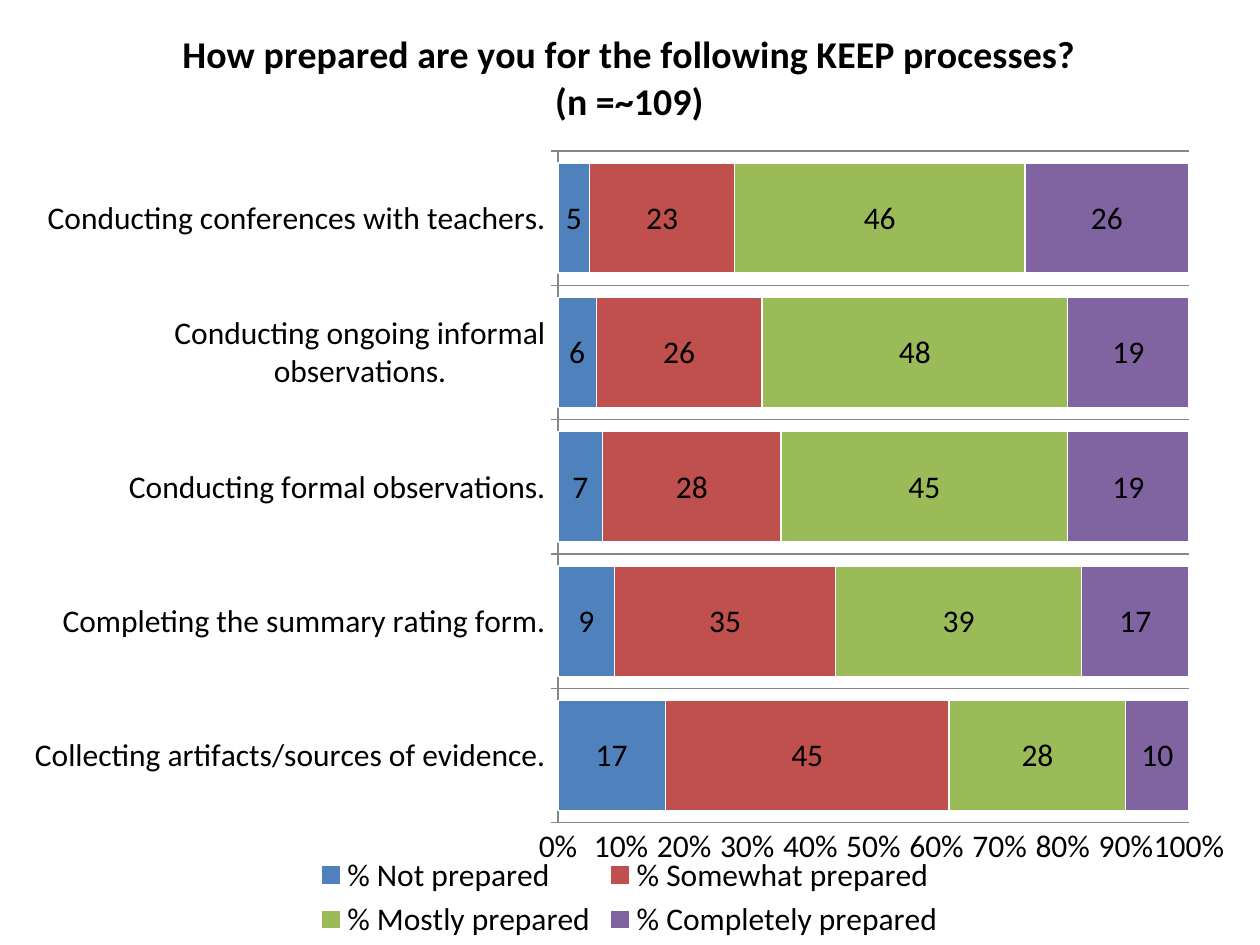
from lxml.etree import SubElement as Sub
from pptx import Presentation
from pptx.chart.data import CategoryChartData as Data
from pptx.dml.color import RGBColor as RGB
from pptx.enum.chart import XL_CHART_TYPE as Kind
from pptx.enum.chart import XL_LABEL_POSITION as Spot
from pptx.enum.chart import XL_LEGEND_POSITION as Side
from pptx.enum.chart import XL_TICK_MARK as Tick
from pptx.oxml.ns import qn
from pptx.util import Pt

BLACK = RGB(0, 0, 0)
WHITE = RGB(255, 255, 255)
GREY = RGB(134, 134, 134)
BLUE = RGB(79, 129, 189)
RED = RGB(192, 80, 77)
GREEN = RGB(155, 187, 89)
PURPLE = RGB(128, 100, 162)

TITLE = ["How prepared are you for the following KEEP processes?", "(n =~109)"]
TASKS = [
    "Collecting artifacts/sources of evidence.",
    "Completing the summary rating form.",
    "Conducting formal observations.",
    "Conducting ongoing informal observations.",
    "Conducting conferences with teachers.",
]
SERIES = [
    ("% Not prepared", BLUE, [17, 9, 7, 6, 5]),
    ("% Somewhat prepared", RED, [45, 35, 28, 26, 23]),
    ("% Mostly prepared", GREEN, [28, 39, 45, 48, 46]),
    ("% Completely prepared", PURPLE, [10, 17, 19, 19, 26]),
]

WIDE, HIGH = 1260, 945
LEFT, SPAN = 10, 1239
PLOT = (558, 151, 631, 672)

BODY = {"name": "Calibri", "size": Pt(18), "bold": False}
HEAD = {"name": "Calibri", "size": Pt(21.6), "bold": True}
BARS = {"gap_width": 22, "overlap": 100, "vary_by_categories": False}
LABELS = {"show_value": True, "position": Spot.CENTER,
          "number_format": "0", "number_format_is_linked": False}
ROWS = {"major_tick_mark": Tick.OUTSIDE, "has_major_gridlines": True}
SCALE = {"major_tick_mark": Tick.NONE, "has_major_gridlines": False,
         "minimum_scale": 0, "maximum_scale": 1, "major_unit": 0.1}
PERCENT = {"number_format": "0%", "number_format_is_linked": False}
KEY = {"position": Side.BOTTOM, "include_in_layout": False}


def px(n):
    return round(n * 914400 / 126)


def put(item, form):
    for name, value in form.items():
        setattr(item, name, value)


def ink(font, form):
    put(font, form)
    font.color.rgb = BLACK


def rule(line, color, width=0.75):
    line.color.rgb = color
    line.width = Pt(width)


def place(chart):
    area = chart.plots[0]._element.getparent()
    for old in area.findall(qn("c:layout")):
        area.remove(old)
    outer = Sub(area, qn("c:layout"))
    area.insert(0, outer)
    box = Sub(outer, qn("c:manualLayout"))
    x, y, w, h = PLOT
    parts = {"layoutTarget": "inner", "xMode": "edge", "yMode": "edge",
             "x": (x - LEFT) / SPAN, "y": y / HIGH, "w": w / SPAN, "h": h / HIGH}
    for tag, value in parts.items():
        Sub(box, qn("c:" + tag)).set("val", str(value))


def main():
    deck = Presentation()
    put(deck, {"slide_width": px(WIDE), "slide_height": px(HIGH)})
    slide = deck.slides.add_slide(deck.slide_layouts[6])

    data = Data(number_format="0")
    data.categories = TASKS
    for name, _, values in SERIES:
        data.add_series(name, values)
    chart = slide.shapes.add_chart(
        Kind.BAR_STACKED_100, px(LEFT), 0, px(SPAN), px(HIGH), data).chart
    ink(chart.font, BODY)

    frame = chart.chart_title.text_frame
    for i, text in enumerate(TITLE):
        line = frame.add_paragraph() if i else frame.paragraphs[0]
        run = line.add_run()
        run.text = text
        ink(run.font, HEAD)
    chart.chart_title.include_in_layout = False

    plot = chart.plots[0]
    put(plot, BARS)
    for bar, (_, color, _) in zip(plot.series, SERIES):
        bar.format.fill.solid()
        bar.format.fill.fore_color.rgb = color
        rule(bar.format.line, WHITE)
        put(bar.data_labels, LABELS)
        ink(bar.data_labels.font, BODY)

    rows, scale = chart.category_axis, chart.value_axis
    put(rows, ROWS)
    rule(rows.format.line, GREY)
    rule(rows.major_gridlines.format.line, GREY)
    put(scale, SCALE)
    put(scale.tick_labels, PERCENT)
    scale.format.line.fill.background()
    for axis in (rows, scale):
        ink(axis.tick_labels.font, BODY)

    chart.has_legend = True
    put(chart.legend, KEY)
    ink(chart.legend.font, BODY)
    place(chart)
    deck.save("out.pptx")


if __name__ == "__main__":
    main()
